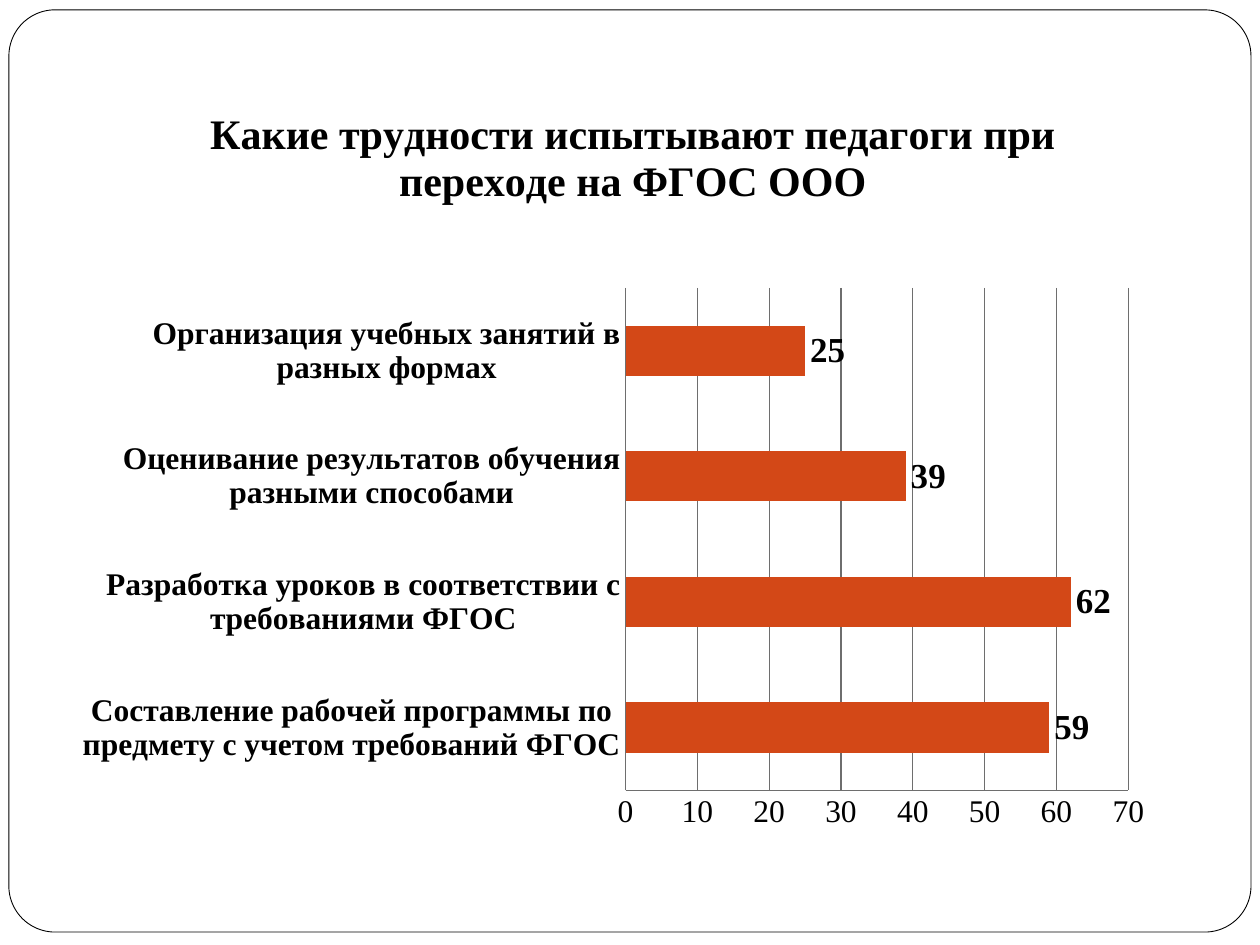
import pptx
import pptx.util
import pptx.chart.data
import pptx.dml.color
import pptx.enum.chart
import pptx.enum.shapes
import pptx.enum.text
import pptx.oxml

Cm, Pt = pptx.util.Cm, pptx.util.Pt
FONT = "Times New Roman"
COLORS = {"text": "000000", "frame": "000000", "paper": "FFFFFF",
          "bar": "D34817", "grid": "6E6E6E"}


def rgb(name):
    return pptx.dml.color.RGBColor.from_string(COLORS[name])


def add_text(tf, text, size=18, bold=False, color="text"):
    p = tf.paragraphs[0]
    p.alignment = pptx.enum.text.PP_ALIGN.CENTER
    r = p.add_run()
    r.text = text
    r.font.name, r.font.size, r.font.bold = FONT, Pt(size), bold
    r.font.color.rgb = rgb(color)


prs = pptx.Presentation()
prs.slide_width, prs.slide_height = Cm(25.4), Cm(19.05)
s = prs.slides.add_slide(prs.slide_layouts[6])

# Rounded frame
sp = s.shapes.add_shape(pptx.enum.shapes.MSO_SHAPE.ROUNDED_RECTANGLE,
                        Cm(0.18), Cm(0.2), Cm(25.04), Cm(18.59))
sp.adjustments[0] = 0.05
sp.shadow.inherit = False
sp.fill.solid()
sp.fill.fore_color.rgb = rgb("paper")
sp.line.color.rgb = rgb("frame")
sp.line.width = Pt(0.5)

# Bar chart of difficulties
difficulties = {
    "Составление рабочей программы по предмету с учетом требований ФГОС": 59,
    "Разработка уроков в соответствии с требованиями ФГОС": 62,
    "Оценивание результатов обучения разными способами": 39,
    "Организация учебных занятий в разных формах": 25,
}
data = pptx.chart.data.CategoryChartData()
data.categories = list(difficulties)
data.add_series("Series 1", list(difficulties.values()))
chart = s.shapes.add_chart(pptx.enum.chart.XL_CHART_TYPE.BAR_CLUSTERED,
                           Cm(1.09), Cm(1.32), Cm(23.04), Cm(16.61), data).chart
chart.has_legend = False
chart.font.name, chart.font.size = FONT, Pt(10)
chart.font.color.rgb = rgb("text")

# Chart title
chart.has_title = True
add_text(chart.chart_title.text_frame,
         "Какие трудности испытывают педагоги при переходе на ФГОС ООО",
         size=24, bold=True)
chart.chart_title.include_in_layout = False

# Bars and value labels
plot = chart.plots[0]
plot.gap_width = 150
plot.vary_by_categories = False
bars = plot.series[0]
bars.format.fill.solid()
bars.format.fill.fore_color.rgb = rgb("bar")
plot.has_data_labels = True
labels = plot.data_labels
labels.show_value = True
labels.position = pptx.enum.chart.XL_LABEL_POSITION.OUTSIDE_END

# Axes
cat_axis, val_axis = chart.category_axis, chart.value_axis
for axis in (cat_axis, val_axis):
    axis.major_tick_mark = pptx.enum.chart.XL_TICK_MARK.NONE
    axis.format.line.color.rgb = rgb("grid")
    axis.format.line.width = Pt(0.75)
cat_axis.has_major_gridlines = False
val_axis.minimum_scale, val_axis.maximum_scale = 0, 70
val_axis.major_unit = 10
val_axis.has_major_gridlines = True
val_axis.major_gridlines.format.line.color.rgb = rgb("grid")
val_axis.major_gridlines.format.line.width = Pt(0.75)

# Fonts of labels and axes
for font, size, bold in ((labels.font, 20, True),
                         (cat_axis.tick_labels.font, 18, True),
                         (val_axis.tick_labels.font, 18, False)):
    font.name, font.size, font.bold = FONT, Pt(size), bold
    font.color.rgb = rgb("text")

# Fixed places of the title and the plot area, as shares of the chart
NS = 'xmlns:c="http://schemas.openxmlformats.org/drawingml/2006/chart"'
title = chart.chart_title._element
plot_area = chart._chartSpace.chart.plotArea
for part, target, place in (
        (title, "", {"x": 0.13, "y": 0.04}),
        (plot_area, '<c:layoutTarget val="inner"/>',
         {"x": 0.5, "y": 0.27, "w": 0.44, "h": 0.61})):
    for old in part.xpath("c:layout"):
        part.remove(old)
    modes = "".join(f'<c:{k}Mode val="edge"/>' for k in place if k in "xy")
    sizes = "".join(f'<c:{k} val="{v}"/>' for k, v in place.items())
    layout = pptx.oxml.parse_xml(
        f"<c:layout {NS}><c:manualLayout>{target}{modes}{sizes}"
        "</c:manualLayout></c:layout>")
    part.insert(1 if part is title else 0, layout)

prs.save("out.pptx")
